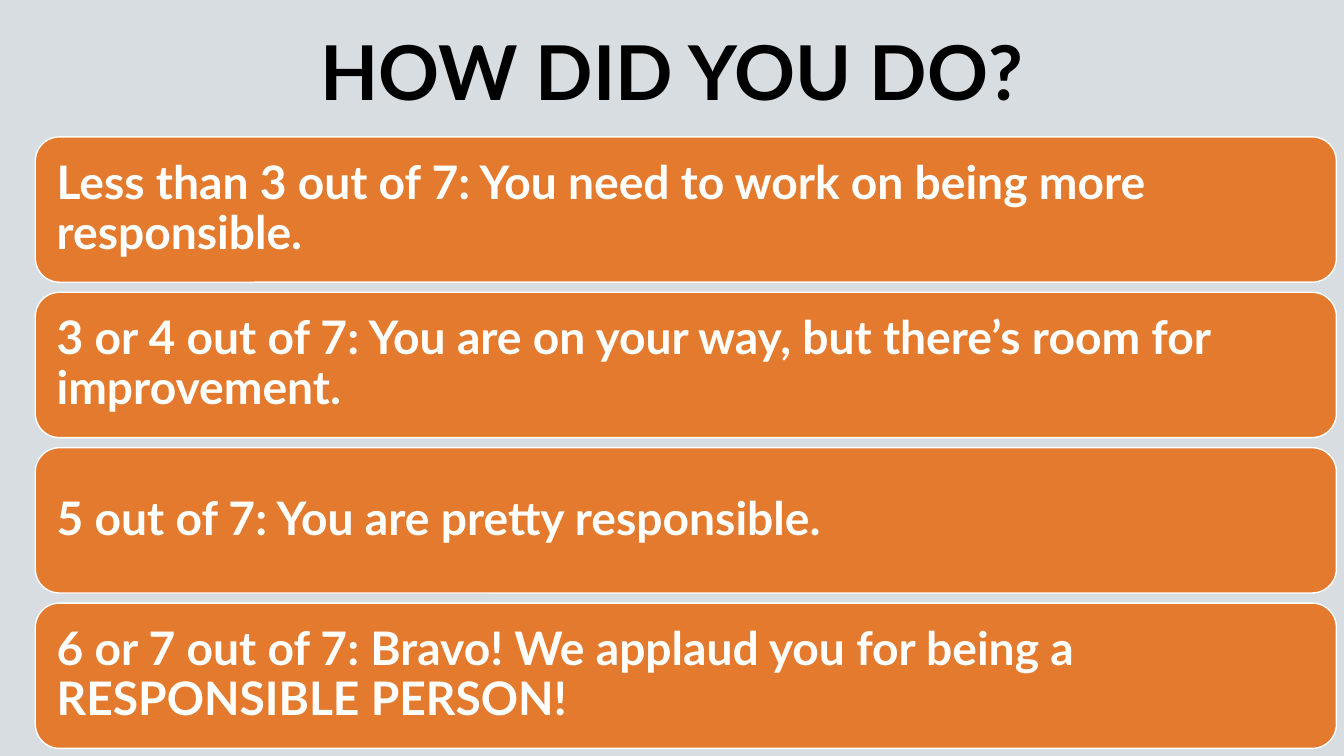
from pptx import Presentation
from pptx.dml.color import RGBColor
from pptx.enum.shapes import MSO_SHAPE
from pptx.enum.text import MSO_ANCHOR, PP_ALIGN
from pptx.util import Pt

EMU_PER_PX = 7620
COLORS = {
    "backdrop": "D8DDE1",
    "card": "E37A2D",
    "light": "FFFFFF",
    "title": "000000",
}
RESULTS = [
    "Less than 3 out of 7: You need to work on being more responsible.",
    "3 or 4 out of 7: You are on your way, but there’s room for improvement.",
    "5 out of 7: You are pretty responsible.",
    "6 or 7 out of 7: Bravo! We applaud you for being a RESPONSIBLE PERSON!",
]
CARD_LEFT, CARD_TOP, CARD_WIDTH, CARD_HEIGHT = 42, 163, 1549, 173
CARD_PITCH = 185
CARD_INSET = 17


def px(length):
    return length * EMU_PER_PX


def color(name):
    return RGBColor.from_string(COLORS[name])


class SlideBuilder:
    font_name = "Lato"

    def __init__(self, slide):
        self.slide = slide

    def background(self, fill_name):
        fill = self.slide.background.fill
        fill.solid()
        fill.fore_color.rgb = color(fill_name)

    def set_text(self, frame, text, size, color_name, align):
        frame.word_wrap = True
        frame.vertical_anchor = MSO_ANCHOR.MIDDLE
        frame.text = text
        paragraph = frame.paragraphs[0]
        paragraph.alignment = align
        paragraph.line_spacing = 0.9
        font = paragraph.runs[0].font
        font.name = self.font_name
        font.size = Pt(size)
        font.bold = True
        font.color.rgb = color(color_name)

    def title(self, text, left, top, width, height):
        heading = self.slide.shapes.add_textbox(
            px(left), px(top), px(width), px(height))
        self.set_text(heading.text_frame, text, 54, "title", PP_ALIGN.CENTER)

    def card(self, text, left, top, width, height):
        card = self.slide.shapes.add_shape(
            MSO_SHAPE.ROUNDED_RECTANGLE, px(left), px(top), px(width), px(height))
        card.shadow.inherit = False
        card.fill.solid()
        card.fill.fore_color.rgb = color("card")
        card.line.color.rgb = color("light")
        card.line.width = Pt(1)
        frame = card.text_frame
        frame.margin_left = frame.margin_right = px(CARD_INSET)
        frame.margin_top = frame.margin_bottom = px(CARD_INSET)
        self.set_text(frame, text, 33, "light", PP_ALIGN.LEFT)


def main():
    presentation = Presentation()
    presentation.slide_width = px(1600)
    presentation.slide_height = px(900)
    builder = SlideBuilder(
        presentation.slides.add_slide(presentation.slide_layouts[6]))
    builder.background("backdrop")
    builder.title("HOW DID YOU DO?", 85, 28, 1430, 126)
    for row, result in enumerate(RESULTS):
        builder.card(result, CARD_LEFT, CARD_TOP + row * CARD_PITCH,
                     CARD_WIDTH, CARD_HEIGHT)
    presentation.save("out.pptx")


if __name__ == "__main__":
    main()
